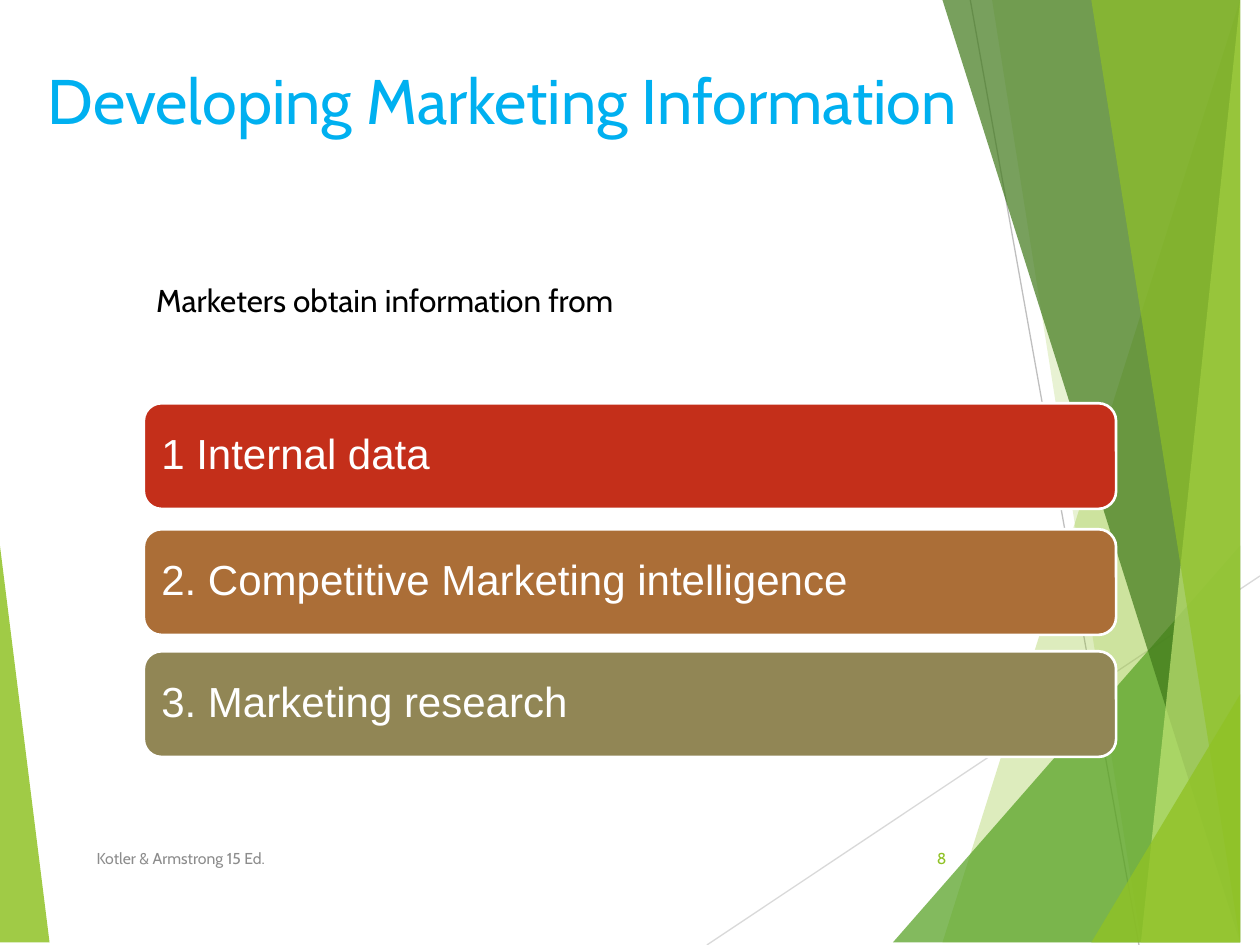
from lxml import etree
from pptx import Presentation
from pptx.dml.color import RGBColor
from pptx.enum.shapes import MSO_CONNECTOR, MSO_SHAPE
from pptx.enum.text import MSO_ANCHOR, MSO_AUTO_SIZE, PP_ALIGN
from pptx.oxml.ns import qn
from pptx.util import Cm, Pt

STRAIGHT = MSO_CONNECTOR.STRAIGHT
ROUNDED = MSO_SHAPE.ROUNDED_RECTANGLE
TOP, MIDDLE = MSO_ANCHOR.TOP, MSO_ANCHOR.MIDDLE
LEFT, RIGHT = PP_ALIGN.LEFT, PP_ALIGN.RIGHT
NO_AUTOFIT = MSO_AUTO_SIZE.NONE

WIDTH, HEIGHT = 25.4, 19.05
COLORS = {
    "lime": "90C226", "green": "54A021", "forest": "3F7819", "pale": "C0E474",
    "light line": "D9D9D9", "line": "BFBFBF", "title": "00B0F0",
    "footer": "8C8C8C", "black": "000000", "white": "FFFFFF",
    "red": "C42F1A", "brown": "AB6E37", "olive": "918655",
}


def color(name):
    return RGBColor.from_string(COLORS[name])


class SlideBuilder:
    """Holds the slide and the style shared by its elements."""

    font = "Cabin"
    bar_font = "Arial"

    def __init__(self, slide):
        self.slide = slide
        self.shapes = slide.shapes

    def set_text(self, shape, text, size, color_name, font=None, anchor=TOP, align=LEFT):
        frame = shape.text_frame
        frame.text = text
        paragraph = frame.paragraphs[0]
        frame_format = {"word_wrap": True, "auto_size": NO_AUTOFIT, "vertical_anchor": anchor}
        font_format = {"name": font or self.font, "size": Pt(size)}
        for target, values in ((frame, frame_format), (paragraph.runs[0].font, font_format)):
            for name, value in values.items():
                setattr(target, name, value)
        paragraph.alignment = align
        paragraph.runs[0].font.color.rgb = color(color_name)
        return paragraph

    def title(self, text, left, top, width, height):
        title = self.shapes.title
        box = {"left": left, "top": top, "width": width, "height": height}
        for name, value in box.items():
            setattr(title, name, Cm(value))
        self.set_text(title, text, 36, "title")

    def text(self, text, box, size, color_name, **layout):
        shape = self.shapes.add_textbox(*map(Cm, box))
        self.set_text(shape, text, size, color_name, **layout)

    def facet(self, points, color_name, opacity):
        builder = self.shapes.build_freeform(*points[0], scale=Cm(1))
        builder.add_line_segments(points[1:], close=True)
        shape = builder.convert_to_shape()
        shape.shadow.inherit = False
        shape.line.fill.background()
        shape.fill.solid()
        shape.fill.fore_color.rgb = color(color_name)
        fill_color = shape._element.spPr.find(".//" + qn("a:srgbClr"))
        etree.SubElement(fill_color, qn("a:alpha"), val=str(opacity * 1000))

    def line(self, start, end, color_name):
        connector = self.shapes.add_connector(STRAIGHT, *map(Cm, start + end))
        connector.line.color.rgb = color(color_name)
        connector.line.width = Pt(0.75)
        etree.SubElement(connector._element.spPr, qn("a:effectLst"))

    def bar(self, text, top, color_name):
        shape = self.shapes.add_shape(ROUNDED, Cm(2.9), Cm(top), Cm(19.6), Cm(2.13))
        shape.shadow.inherit = False
        shape.fill.solid()
        shape.fill.fore_color.rgb = color(color_name)
        shape.line.color.rgb = color("white")
        shape.line.width = Pt(1.5)
        paragraph = self.set_text(shape, text, 24, "white", font=self.bar_font, anchor=MIDDLE)
        paragraph.line_spacing = 0.9


def main():
    presentation = Presentation()
    presentation.slide_width, presentation.slide_height = Cm(WIDTH), Cm(HEIGHT)
    builder = SlideBuilder(presentation.slides.add_slide(presentation.slide_layouts[5]))

    # Background: left facet and thin lines
    builder.facet([(0, 11.15), (1.24, HEIGHT), (0, HEIGHT)], "lime", 85)
    builder.line((14.25, HEIGHT), (WIDTH, 11.61), "light line")
    builder.line((19.56, 0), (22.96, HEIGHT), "line")

    # Background: right facets, each from a slanted left edge to the slide's edge
    facets = [
        (24.77, 0, 19.15, "lime", 30),
        (20.02, 0, 23.34, "lime", 20),
        (WIDTH, 10.9, 18.44, "green", 72),
        (19.48, 0, 24.64, "forest", 70),
        (24.92, 0, 23.04, "pale", 70),
        (22.43, 0, 25.04, "lime", 65),
        (WIDTH, 13.59, 22.38, "lime", 80),
    ]
    for top_x, top_y, bottom_x, color_name, opacity in facets:
        points = [(top_x, top_y), (bottom_x, HEIGHT), (WIDTH, HEIGHT), (WIDTH, top_y)]
        builder.facet(points, color_name, opacity)

    # Title and footer
    builder.title("Developing Marketing Information", 0.71, 1.12, 23.9, 3.18)
    builder.text("Kotler & Armstrong 15 Ed.", (1.7, 16.79, 12.85, 1.02), 9, "footer",
                 anchor=MIDDLE)
    builder.text("8", (17.91, 16.79, 1.42, 1.02), 9, "lime", anchor=MIDDLE, align=RIGHT)

    # Sources of information
    bars = [
        ("1 Internal data", 8.13, "red"),
        ("2. Competitive Marketing intelligence", 10.67, "brown"),
        ("3. Marketing research", 13.13, "olive"),
    ]
    for text, top, color_name in bars:
        builder.bar(text, top, color_name)
    builder.text("Marketers obtain information from", (2.9, 5.54, 20.6, 1.8), 18, "black")

    presentation.save("out.pptx")


if __name__ == "__main__":
    main()
